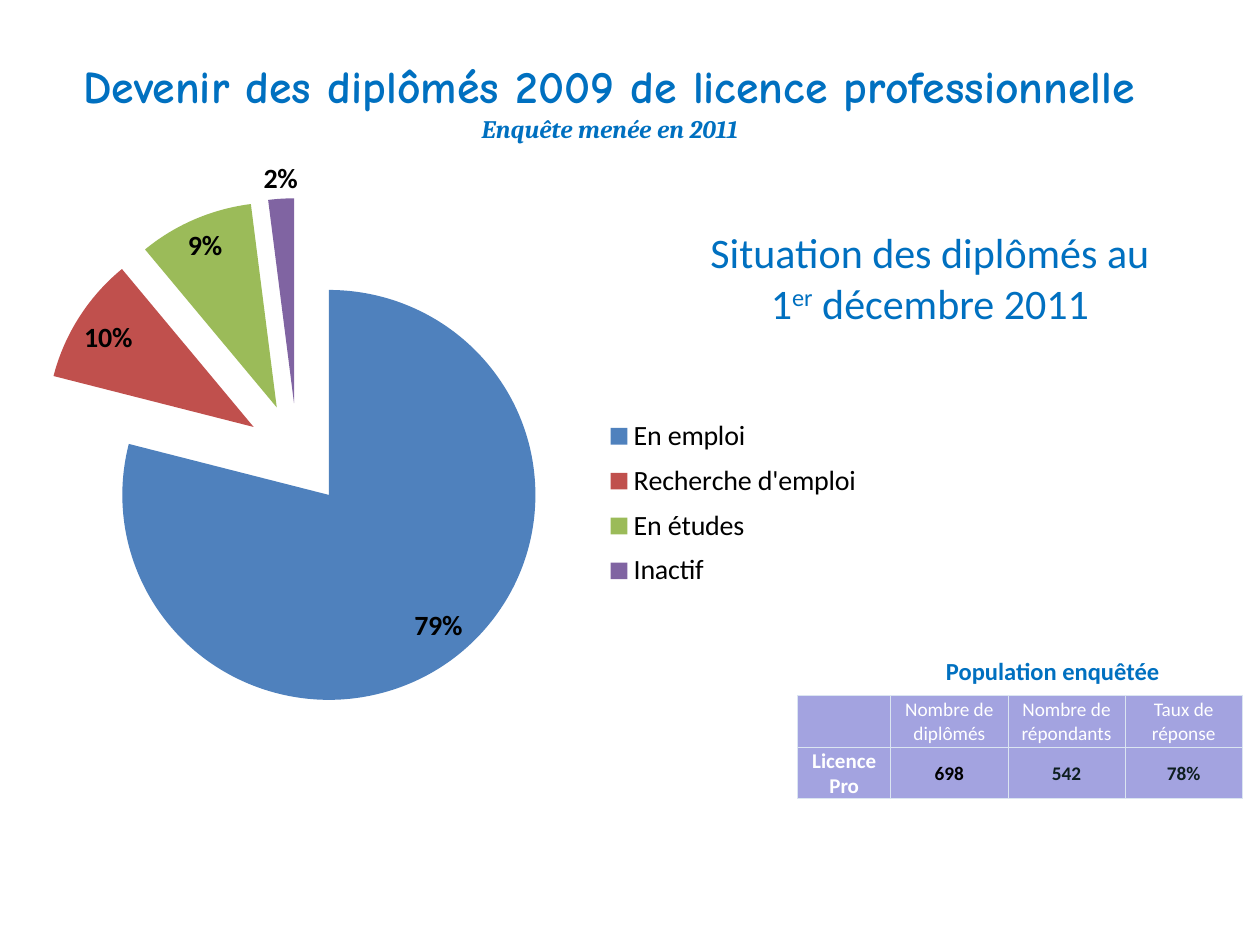
from dataclasses import dataclass

from pptx import Presentation
from pptx.chart.data import CategoryChartData
from pptx.dml.color import RGBColor
from pptx.enum.chart import XL_CHART_TYPE, XL_LABEL_POSITION as LabelPos, XL_LEGEND_POSITION as LegendPos
from pptx.enum.text import MSO_ANCHOR as Anchor, PP_ALIGN as Align
from pptx.oxml import parse_xml
from pptx.oxml.ns import nsdecls, qn
from pptx.util import Inches, Pt

COLORS = {
    "title": "0070C0", "black": "000000", "white": "FFFFFF", "dark": "0E1E20",
    "cell": "A3A3E0", "border": "DBE5F1",
}


@dataclass
class Style:
    size: float
    color: str = "title"
    bold: bool = False
    italic: bool = False
    font: str = "Calibri"
    baseline: int = 0


@dataclass
class Box:
    left: float
    top: float
    width: float
    height: float
    runs: list[tuple[str, Style]]
    anchor: Anchor = Anchor.TOP
    bottom: float = 0.05


@dataclass
class Slice:
    name: str
    value: int
    color: str


HEAD = Style(11, "white")
SITUATION = Style(24)
BOXES = [
    Box(0.35, 0.39, 8.98, 1.12, [
        ("Devenir des diplômés 2009 de licence professionnelle\v",
         Style(26.1, bold=True, font="Comic Neue")),
        ("Enquête menée en 2011", Style(14.4, bold=True, italic=True, font="Cambria")),
    ], Anchor.MIDDLE, 0.35),
    Box(6.95, 5.16, 2.81, 0.34, [("Population enquêtée", Style(14, bold=True))]),
    Box(5.39, 1.75, 3.98, 0.91, [
        ("Situation des diplômés au 1", SITUATION),
        ("er", Style(24, baseline=30000)),
        (" décembre 2011", SITUATION),
    ]),
]
SLICES = [
    Slice("En emploi", 79, "4F81BD"),
    Slice("Recherche d'emploi", 10, "C0504D"),
    Slice("En études", 9, "9BBB59"),
    Slice("Inactif", 2, "8064A2"),
]
COL_WIDTHS = [0.74, 0.93, 0.93, 0.93]
VALUE = Style(11, "dark", bold=True)
ROWS = [
    [("", HEAD), ("Nombre de diplômés", HEAD), ("Nombre de répondants", HEAD),
     ("Taux de réponse", HEAD)],
    [("Licence Pro", Style(12, "white", bold=True)),
     ("698", Style(11, "black", bold=True)), ("542", VALUE), ("78%", VALUE)],
]


def rgb(name: str) -> RGBColor:
    """Return the palette colour with this name."""
    return RGBColor.from_string(COLORS[name])


def style_font(font, style: Style) -> None:
    """Apply a text style to a font."""
    font.name, font.size = style.font, Pt(style.size)
    font.bold, font.italic = style.bold, style.italic
    font.color.rgb = rgb(style.color)


def add_box(s, box: Box) -> None:
    """Draw a centred text box made of styled runs."""
    sp = s.shapes.add_textbox(*map(Inches, (box.left, box.top, box.width, box.height)))
    tf = sp.text_frame
    tf.word_wrap, tf.vertical_anchor = True, box.anchor
    tf.margin_bottom = Inches(box.bottom)
    p = tf.paragraphs[0]
    p.text = "".join(text for text, _ in box.runs) if "\v" in box.runs[0][0] else ""
    p.alignment = Align.CENTER
    if not p.runs:
        for text, _ in box.runs:
            p.add_run().text = text
    for r, (_, style) in zip(p.runs, box.runs):
        style_font(r.font, style)
        if style.baseline:
            r.font._element.set("baseline", str(style.baseline))


def set_layout(parent, after: str | None, x: float, y: float, w: float, h: float,
               target: str = "") -> None:
    """Give a chart part a manual layout in fractions of the chart."""
    for old in parent.findall(qn("c:layout")):
        parent.remove(old)
    inner = f'<c:layoutTarget val="{target}"/>' if target else ""
    modes = '<c:xMode val="edge"/><c:yMode val="edge"/>'
    sizes = "".join(f'<c:{k} val="{v}"/>' for k, v in zip("xywh", (x, y, w, h)))
    layout = parse_xml(f'<c:layout {nsdecls("c")}><c:manualLayout>{inner}{modes}{sizes}'
                       "</c:manualLayout></c:layout>")
    if after:
        parent.find(qn(after)).addnext(layout)
    else:
        parent.insert(0, layout)


def add_pie(s, slices: list[Slice]) -> None:
    """Draw the exploded pie with percent labels and a legend."""
    data = CategoryChartData()
    data.categories = [item.name for item in slices]
    data.add_series("Diplômés", [item.value for item in slices])
    chart = s.shapes.add_chart(XL_CHART_TYPE.PIE_EXPLODED, Inches(0.31), Inches(1.25),
                               Inches(6.72), Inches(4.92), data).chart
    style_font(chart.font, Style(10, "black"))
    chart.has_title = False
    chart.has_legend = True
    legend = chart.legend
    legend.position, legend.include_in_layout = LegendPos.RIGHT, False
    style_font(legend.font, Style(16, "black"))
    set_layout(legend._element, "c:legendPos", 0.66, 0.4, 0.32, 0.31)
    plot_area = chart._chartSpace.chart.plotArea
    set_layout(plot_area, None, 0, 0, 0.61, 0.95, "inner")

    plot = chart.plots[0]
    plot.vary_by_categories = True
    for explosion in plot_area.iter(qn("c:explosion")):
        explosion.set("val", "25")
    for point, item in enumerate(slices):
        fill = plot.series[0].points[point].format.fill
        fill.solid()
        fill.fore_color.rgb = RGBColor.from_string(item.color)
    plot.has_data_labels = True
    labels = plot.data_labels
    labels.show_percentage, labels.show_value = True, False
    labels.number_format, labels.number_format_is_linked = "0%", False
    labels.position = LabelPos.BEST_FIT
    style_font(labels.font, Style(16, "black", bold=True))


def format_cell(cell, text: str, style: Style) -> None:
    """Fill one table cell, with thin borders on every side."""
    cell.text = text
    cell.vertical_anchor = Anchor.MIDDLE
    cell.margin_left = cell.margin_right = cell.margin_top = Inches(0.01)
    cell.margin_bottom = 0
    p = cell.text_frame.paragraphs[0]
    p.alignment = Align.CENTER
    for r in p.runs:
        style_font(r.font, style)
    for side in "LRTB":
        cell._tc.get_or_add_tcPr().append(parse_xml(
            f'<a:ln{side} {nsdecls("a")} w="{Pt(0.5)}"><a:solidFill>'
            f'<a:srgbClr val="{COLORS["border"]}"/></a:solidFill></a:ln{side}>'))
    cell.fill.solid()
    cell.fill.fore_color.rgb = rgb("cell")


def add_survey_table(s) -> None:
    """Draw the table of the surveyed population."""
    table = s.shapes.add_table(len(ROWS), len(COL_WIDTHS), Inches(6.33), Inches(5.52),
                               Inches(sum(COL_WIDTHS)), Inches(0.82)).table
    for column, width in zip(table.columns, COL_WIDTHS):
        column.width = Inches(width)
    for i, row in enumerate(ROWS):
        for j, (text, style) in enumerate(row):
            format_cell(table.cell(i, j), text, style)


def main() -> None:
    """Build and save the slide."""
    prs = Presentation()
    prs.slide_width, prs.slide_height = Inches(10), Inches(7.5)
    s = prs.slides.add_slide(prs.slide_layouts[6])
    add_pie(s, SLICES)
    for box in BOXES:
        add_box(s, box)
    add_survey_table(s)
    prs.save("out.pptx")


if __name__ == "__main__":
    main()
